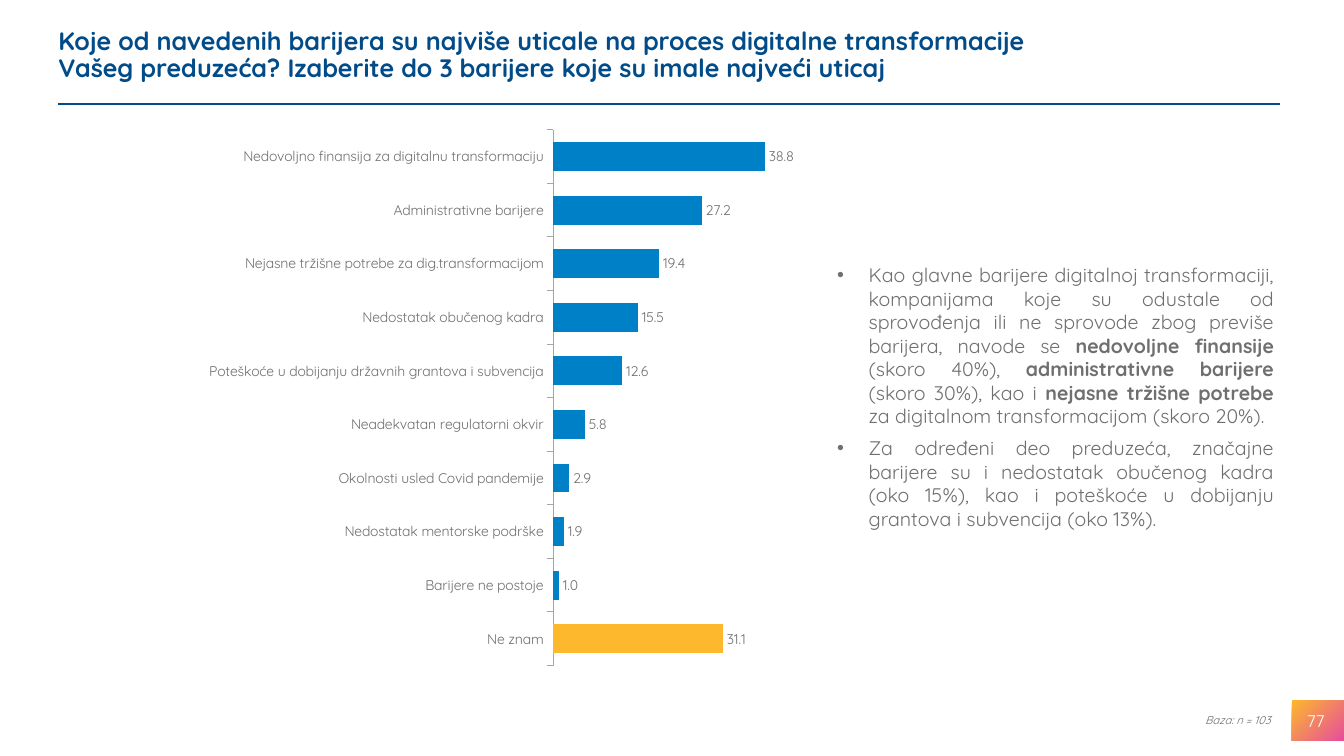
"""Build the slide on barriers to digital transformation."""
from dataclasses import dataclass

import lxml.etree
import pptx
import pptx.chart.data
import pptx.dml.color
import pptx.enum.chart
import pptx.enum.shapes
import pptx.enum.text
import pptx.oxml.ns
import pptx.util

Cm, Pt = pptx.util.Cm, pptx.util.Pt
qn = pptx.oxml.ns.qn
Align = pptx.enum.text.PP_ALIGN
Anchor = pptx.enum.text.MSO_ANCHOR
Fit = pptx.enum.text.MSO_AUTO_SIZE
FACE = "Quicksand"
HUES = {
    "navy": "004B88",
    "blue": "0080C6",
    "gold": "FDB82E",
    "pink": "E64E9C",
    "gray": "706E70",
    "rule": "A6A6A6",
    "white": "FFFFFF",
}


@dataclass(frozen=True)
class Box:
    left: float
    top: float
    width: float
    height: float

    def spans(self) -> tuple:
        return tuple(Cm(n) for n in (self.left, self.top, self.width, self.height))


@dataclass(frozen=True)
class Style:
    size: float
    hue: str
    bold: bool = False
    slant: bool = False


@dataclass(frozen=True)
class Note:
    box: Box
    style: Style
    lines: tuple
    align: Align = Align.LEFT
    anchor: Anchor = Anchor.TOP
    fit: Fit = Fit.NONE
    bullet: bool = False
    after: float = 0


@dataclass(frozen=True)
class Bar:
    label: str
    value: float
    hue: str = "blue"


HEAD = Note(
    Box(1.47, 0.41, 31.19, 2.01), Style(18, "navy", bold=True),
    (("Koje od navedenih barijera su najviše uticale na proces digitalne transformacije",),
     ("Vašeg preduzeća? Izaberite do 3 barijere koje su imale najveći uticaj",)),
    anchor=Anchor.MIDDLE)

# Odd-numbered runs of each line are bold.
NOTES = (
    Note(Box(26.01, 17.65, 7.62, 1.02), Style(12, "white"), (("77",),),
         align=Align.RIGHT, anchor=Anchor.MIDDLE),
    Note(Box(30.12, 17.86, 2.49, 0.61), Style(8, "gray", slant=True),
         (("Baza: n = 103",),), fit=Fit.SHAPE_TO_FIT_TEXT),
    Note(Box(20.85, 6.5, 11.51, 7.65), Style(14, "gray"),
         (("Kao glavne barijere digitalnoj transformaciji, kompanijama koje su odustale od "
           "sprovođenja ili ne sprovode zbog previše barijera, navode se ",
           "nedovoljne finansije ", "(skoro 40%), ", "administrativne barijere",
           " (skoro 30%), kao i ", "nejasne tržišne potrebe ",
           "za digitalnom transformacijom (skoro 20%)."),
          ("Za određeni deo preduzeća, značajne barijere su i nedostatak obučenog kadra "
           "(oko 15%), kao i poteškoće u dobijanju grantova i subvencija (oko 13%).",)),
         align=Align.JUSTIFY, fit=Fit.SHAPE_TO_FIT_TEXT, bullet=True, after=6),
)

BARS = (
    Bar("Nedovoljno finansija za digitalnu transformaciju", 38.8),
    Bar("Administrativne barijere", 27.2),
    Bar("Nejasne tržišne potrebe za dig.transformacijom", 19.4),
    Bar("Nedostatak obučenog kadra", 15.5),
    Bar("Poteškoće u dobijanju državnih grantova i subvencija", 12.6),
    Bar("Neadekvatan regulatorni okvir", 5.8),
    Bar("Okolnosti usled Covid pandemije", 2.9),
    Bar("Nedostatak mentorske podrške", 1.9),
    Bar("Barijere ne postoje", 1.0),
    Bar("Ne znam", 31.1, "gold"),
)
PLOT = {"layoutTarget": "inner", "xMode": "edge", "yMode": "edge",
        "x": 0.51, "y": 0.06, "w": 0.49, "h": 0.87}


def tint(name: str) -> pptx.dml.color.RGBColor:
    """Return the named colour."""
    return pptx.dml.color.RGBColor.from_string(HUES[name])


def set_font(font, style: Style) -> None:
    """Apply a text style to a font."""
    font.name, font.size = FACE, Pt(style.size)
    font.bold, font.italic = style.bold, style.slant
    font.color.rgb = tint(style.hue)


def add_mark(para) -> None:
    """Give a paragraph a hanging round bullet."""
    props = para._p.get_or_add_pPr()
    props.set("marL", str(Cm(0.79)))
    props.set("indent", str(-Cm(0.79)))
    lxml.etree.SubElement(props, qn("a:buFont"), typeface="Arial")
    lxml.etree.SubElement(props, qn("a:buChar"), char="•")


def write(shape, note: Note) -> None:
    """Place a text shape and fill in its lines."""
    shape.left, shape.top, shape.width, shape.height = note.box.spans()
    frame = shape.text_frame
    frame.word_wrap, frame.auto_size = True, note.fit
    frame.vertical_anchor = note.anchor
    for place, line in enumerate(note.lines):
        para = frame.add_paragraph() if place else frame.paragraphs[0]
        para.alignment, para.space_after = note.align, Pt(note.after)
        if note.bullet:
            add_mark(para)
        set_font(para.font, note.style)
        for turn, words in enumerate(line):
            run = para.add_run()
            run.text = words
            if turn % 2:
                run.font.bold = True


def add_head(slide) -> None:
    """Fill the title and draw the rule below it."""
    title = slide.shapes.title
    write(title, HEAD)
    title.text_frame.margin_left = 0
    for para in title.text_frame.paragraphs:
        para.line_spacing = 0.9
    rule = slide.shapes.add_connector(
        pptx.enum.shapes.MSO_CONNECTOR.STRAIGHT, Cm(1.47), Cm(2.62), Cm(32.26), Cm(2.62))
    rule.line.color.rgb, rule.line.width = tint("navy"), Pt(1.5)
    lxml.etree.SubElement(rule._element.spPr, qn("a:effectLst"))


def add_badge(slide) -> None:
    """Draw the shaded square behind the page number."""
    badge = slide.shapes.add_shape(
        pptx.enum.shapes.MSO_SHAPE.RECTANGLE, *Box(32.56, 17.65, 1.3, 1.02).spans())
    badge.shadow.inherit = False
    badge.line.fill.background()
    badge.fill.gradient()
    badge.fill.gradient_angle = 315
    for stop, name in zip(badge.fill.gradient_stops, ("gold", "pink")):
        stop.color.rgb = tint(name)


def add_bars(slide) -> None:
    """Draw the bar chart of barriers."""
    data = pptx.chart.data.CategoryChartData(number_format="#,##0.0")
    data.categories = [bar.label for bar in BARS]
    data.add_series("Series 1", [bar.value for bar in BARS])
    kinds = pptx.enum.chart
    chart = slide.shapes.add_chart(
        kinds.XL_CHART_TYPE.BAR_CLUSTERED, *Box(2.51, 2.34, 22.43, 15.52).spans(), data).chart
    style = Style(10, "gray")
    set_font(chart.font, style)
    chart.has_legend = chart.has_title = False
    axis = chart.category_axis
    axis.reverse_order, axis.has_major_gridlines = True, False
    axis.major_tick_mark = kinds.XL_TICK_MARK.OUTSIDE
    axis.format.line.color.rgb, axis.format.line.width = tint("rule"), Pt(0.75)
    set_font(axis.tick_labels.font, style)
    scale = chart.value_axis
    scale.minimum_scale, scale.maximum_scale = 0, 80
    scale.has_major_gridlines = scale.visible = False
    plot = chart.plots[0]
    plot.gap_width, plot.vary_by_categories = 85, False
    row = plot.series[0]
    row.format.fill.solid()
    row.format.fill.fore_color.rgb = tint("blue")
    for place, bar in enumerate(BARS):
        if bar.hue != "blue":
            fill = row.points[place].format.fill
            fill.solid()
            fill.fore_color.rgb = tint(bar.hue)
    labels = row.data_labels
    labels.show_value, labels.position = True, kinds.XL_LABEL_POSITION.OUTSIDE_END
    labels.number_format, labels.number_format_is_linked = "#,##0.0", False
    set_font(labels.font, style)
    area = chart._chartSpace.chart.plotArea
    for old in area.findall(qn("c:layout")):
        area.remove(old)
    layout = lxml.etree.Element(qn("c:layout"))
    area.insert(0, layout)
    manual = lxml.etree.SubElement(layout, qn("c:manualLayout"))
    for key, value in PLOT.items():
        lxml.etree.SubElement(manual, qn(f"c:{key}"), val=str(value))


def main() -> None:
    """Build and save the slide."""
    deck = pptx.Presentation()
    deck.slide_width, deck.slide_height = Cm(33.87), Cm(19.05)
    slide = deck.slides.add_slide(deck.slide_layouts[5])
    add_head(slide)
    add_badge(slide)
    add_bars(slide)
    for note in NOTES:
        write(slide.shapes.add_textbox(*note.box.spans()), note)
    deck.save("out.pptx")


if __name__ == "__main__":
    main()
